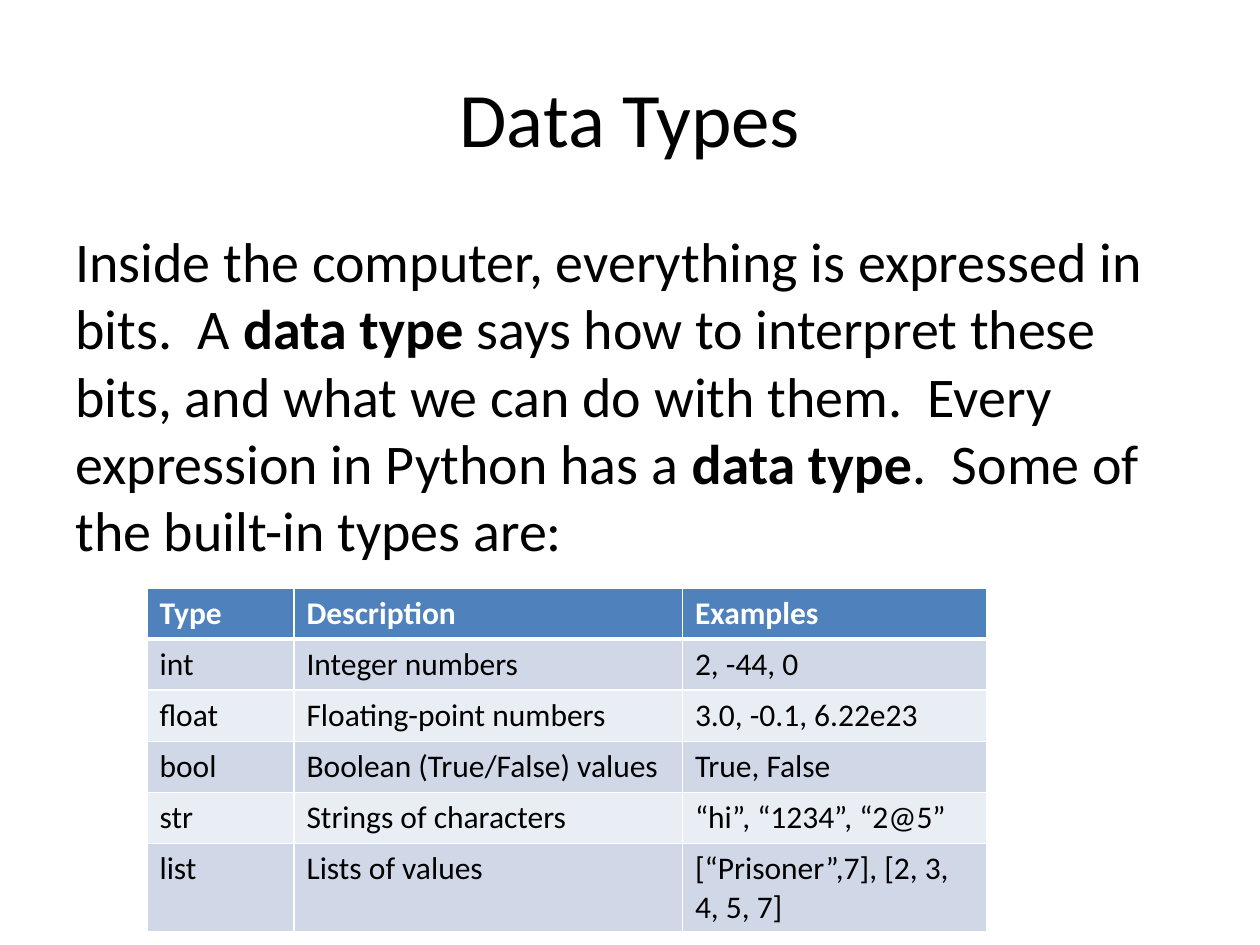
import pptx
import pptx.util
import pptx.dml.color
import pptx.enum.text
import pptx.oxml
import pptx.oxml.ns

Pt = pptx.util.Pt
RGB = pptx.dml.color.RGBColor
ALIGN = pptx.enum.text.PP_ALIGN
ANCHOR = pptx.enum.text.MSO_ANCHOR

BLACK = RGB(0x00, 0x00, 0x00)
WHITE = RGB(0xFF, 0xFF, 0xFF)
BLUE = RGB(0x4F, 0x81, 0xBD)
BANDS = [RGB(0xE9, 0xED, 0xF4), RGB(0xD0, 0xD8, 0xE8)]


def write(para, text, size, color=BLACK, bold=False):
    run = para.add_run()
    run.text = text
    form = {"name": "Calibri", "size": Pt(size), "bold": bold}
    for key, value in form.items():
        setattr(run.font, key, value)
    run.font.color.rgb = color


def edge(cell, side, width):
    """Draw a white border on one side (L, R, T or B) of a cell."""
    line = pptx.oxml.parse_xml(
        f'<a:ln{side} {pptx.oxml.ns.nsdecls("a")} w="{Pt(width)}">'
        f'<a:solidFill><a:srgbClr val="{WHITE}"/></a:solidFill></a:ln{side}>')
    cell._tc.get_or_add_tcPr().append(line)


deck = pptx.Presentation()
deck.slide_width, deck.slide_height = Pt(720), Pt(540)
slide = deck.slides.add_slide(deck.slide_layouts[6])

# Title and body text
boxes = [
    (21.6, 90, 44, ANCHOR.MIDDLE, ALIGN.CENTER, 0, ["Data Types"]),
    (126, 356.4, 32, ANCHOR.TOP, ALIGN.LEFT, 6.4, [
        "Inside the computer, everything is expressed in bits.  A ",
        "data type",
        " says how to interpret these bits, and what we can do with them.  "
        "Every expression in Python has a ",
        "data type",
        ".  Some of the built-in types are:"]),
]
for top, height, size, anchor, align, before, parts in boxes:
    box = slide.shapes.add_textbox(Pt(36), Pt(top), Pt(648), Pt(height))
    frame = box.text_frame
    form = {"word_wrap": True, "vertical_anchor": anchor}
    for key, value in form.items():
        setattr(frame, key, value)
    para = frame.paragraphs[0]
    para.alignment = align
    para.space_before = Pt(before)
    for part in parts:
        write(para, part, size, bold=part == "data type")

# Table of built-in types
rows = [
    ("Type", "Description", "Examples"),
    ("int", "Integer numbers", "2, -44, 0"),
    ("float", "Floating-point numbers", "3.0, -0.1, 6.22e23"),
    ("bool", "Boolean (True/False) values", "True, False"),
    ("str", "Strings of characters", "“hi”, “1234”, “2@5”"),
    ("list", "Lists of values", "[“Prisoner”,7], [2, 3, 4, 5, 7]"),
]
widths = [84, 222, 174]
high = 29.2
table = slide.shapes.add_table(
    len(rows), len(widths), Pt(84), Pt(336), Pt(sum(widths)),
    Pt(high * len(rows))).table
for col, width in zip(table.columns, widths):
    col.width = Pt(width)
for r, row in enumerate(rows):
    table.rows[r].height = Pt(high)
    head = r == 0
    for c, text in enumerate(row):
        cell = table.cell(r, c)
        for side in "LRTB":
            thick = (head and side == "B") or (r == 1 and side == "T")
            edge(cell, side, 3 if thick else 1)
        cell.fill.solid()
        cell.fill.fore_color.rgb = BLUE if head else BANDS[r % 2]
        write(cell.text_frame.paragraphs[0], text, 18,
              WHITE if head else BLACK, head)

deck.save("out.pptx")
